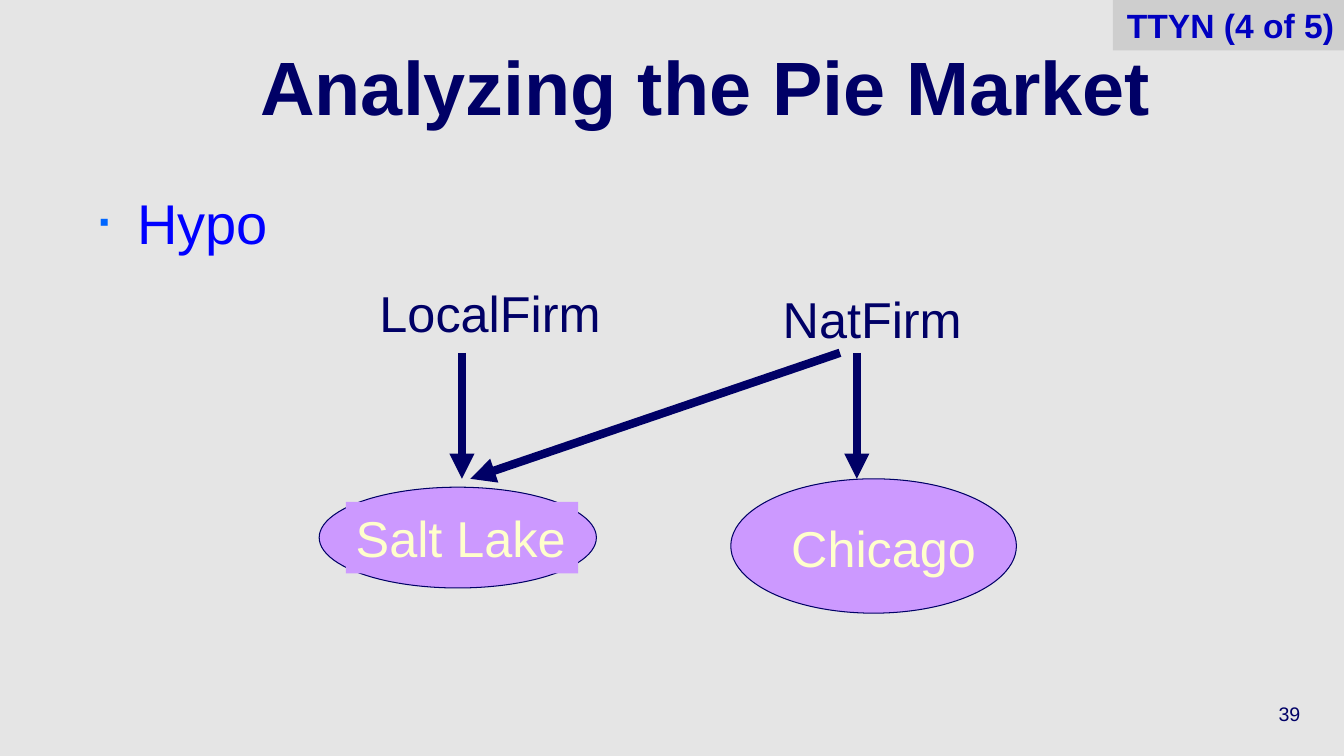
"""Build the slide on the pie market hypothetical, with firms pointing to the cities they serve."""
from lxml.etree import SubElement
from pptx import Presentation
from pptx.dml.color import RGBColor
from pptx.enum.shapes import MSO_CONNECTOR, MSO_SHAPE
from pptx.enum.text import MSO_ANCHOR, PP_ALIGN
from pptx.oxml.ns import qn
from pptx.util import Pt

NAVY = RGBColor(0x00, 0x00, 0x66)
BLUE = RGBColor(0x00, 0x00, 0xFF)
TAG_BLUE = RGBColor(0x00, 0x00, 0xC0)
LILAC = RGBColor(0xCC, 0x99, 0xFF)
CREAM = RGBColor(0xFF, 0xFF, 0xCC)
PALE_GRAY = RGBColor(0xE5, 0xE5, 0xE5)
TAG_GRAY = RGBColor(0xCE, 0xCE, 0xCE)


def write(shape, text, size, color, align=PP_ALIGN.LEFT, bold=False, wrap=False):
    frame = shape.text_frame
    frame.text = text
    frame.word_wrap = wrap
    paragraph = frame.paragraphs[0]
    paragraph.alignment = align
    font = paragraph.runs[0].font
    font.name, font.size, font.bold = "Arial", Pt(size), bold
    font.color.rgb = color
    return paragraph


def add_filled(kind, bounds, color):
    shape = slide.shapes.add_shape(kind, *map(Pt, bounds))
    shape.shadow.inherit = False
    shape.fill.solid()
    shape.fill.fore_color.rgb = color
    shape.line.fill.background()
    return shape


deck = Presentation()
deck.slide_width, deck.slide_height = Pt(960), Pt(540)
slide = deck.slides.add_slide(deck.slide_layouts[5])
slide.background.fill.solid()
slide.background.fill.fore_color.rgb = PALE_GRAY

title = slide.shapes.title
title.left, title.top, title.width, title.height = Pt(64), Pt(24), Pt(880), Pt(90)
heading = write(title, "Analyzing the Pie Market", 54, NAVY, PP_ALIGN.CENTER, True, True)
heading.line_spacing = 0.7
title.text_frame.vertical_anchor = MSO_ANCHOR.MIDDLE

page_number = slide.shapes.add_textbox(Pt(736), Pt(492), Pt(200), Pt(36))
write(page_number, "39", 14, NAVY, PP_ALIGN.RIGHT, wrap=True)
page_number.text_frame.vertical_anchor = MSO_ANCHOR.MIDDLE

topic = slide.shapes.add_textbox(Pt(64), Pt(131), Pt(880), Pt(319))
hypo = write(topic, "Hypo", 40, BLUE, wrap=True)
bullet = hypo._p.get_or_add_pPr()
bullet.set("marL", str(Pt(27)))
bullet.set("indent", str(Pt(-27)))
SubElement(SubElement(bullet, qn("a:buClr")), qn("a:srgbClr"), val="0066FF")
SubElement(bullet, qn("a:buSzPct"), val="50000")
SubElement(bullet, qn("a:buFont"), typeface="Arial")
SubElement(bullet, qn("a:buChar"), char="▪")

for market in [(228, 348, 198, 72), (522, 342, 204, 96)]:
    oval = add_filled(MSO_SHAPE.OVAL, market, LILAC)
    oval.line.color.rgb = NAVY
    oval.line.width = Pt(0.75)

salt_lake = add_filled(MSO_SHAPE.RECTANGLE, (247, 358.5, 166, 51), LILAC)
write(salt_lake, "Salt Lake", 36, CREAM)

for name, left, top, width, color in [
    ("Chicago", 558, 366, 148, CREAM),
    ("LocalFirm", 264, 198, 174, NAVY),
    ("NatFirm", 552, 202.5, 144, NAVY),
]:
    label = slide.shapes.add_textbox(Pt(left), Pt(top), Pt(width), Pt(51))
    write(label, name, 36, color)

for firm_x, city_x in [(612, 612), (600, 336), (330, 330)]:
    arrow = slide.shapes.add_connector(
        MSO_CONNECTOR.STRAIGHT, Pt(firm_x), Pt(252), Pt(city_x), Pt(342)
    )
    arrow.line.color.rgb = NAVY
    arrow.line.width = Pt(6)
    SubElement(arrow.line._get_or_add_ln(), qn("a:tailEnd"), type="triangle")
    SubElement(arrow._element.spPr, qn("a:effectLst"))

tag = add_filled(MSO_SHAPE.RECTANGLE, (795, 0, 165, 36), TAG_GRAY)
write(tag, "TTYN (4 of 5)", 24, TAG_BLUE, PP_ALIGN.RIGHT, True, True)

deck.save("out.pptx")
